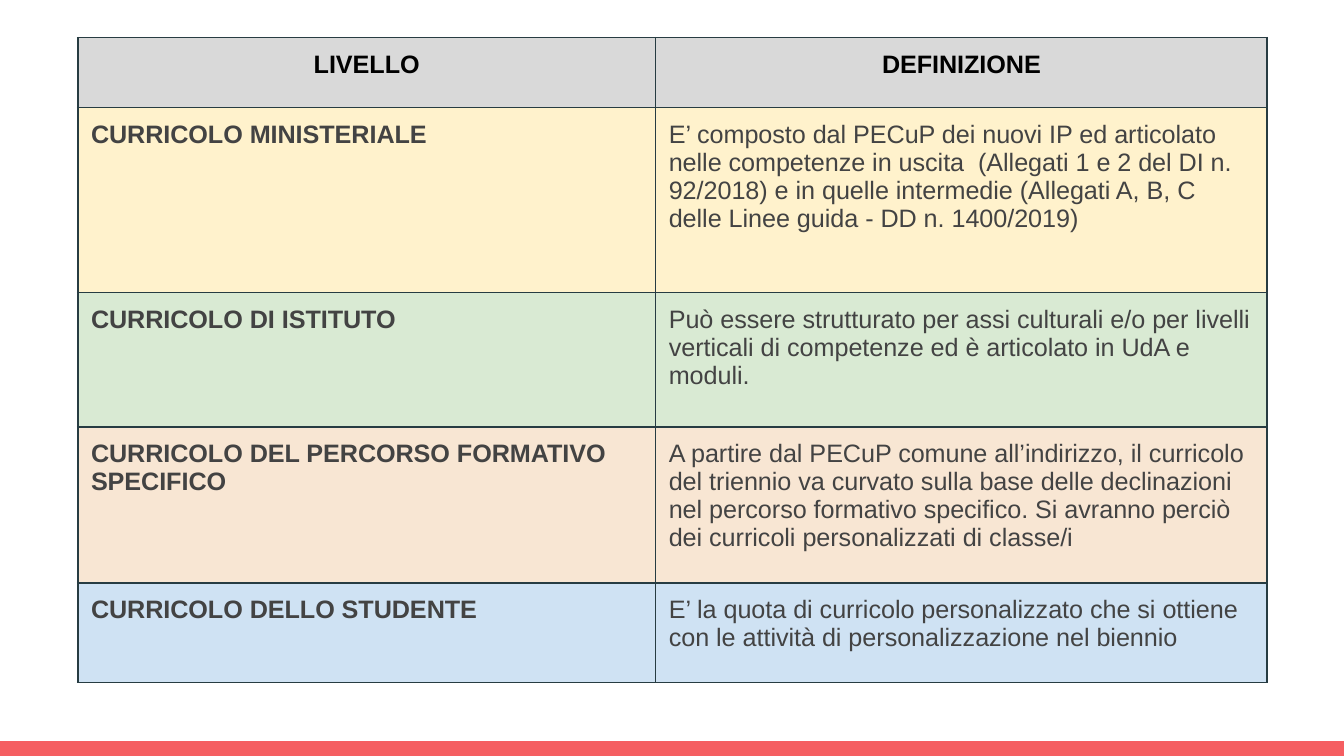
from lxml.etree import SubElement
from pptx import Presentation
from pptx.dml.color import RGBColor
from pptx.enum.shapes import MSO_SHAPE
from pptx.enum.text import PP_ALIGN
from pptx.oxml.ns import qn
from pptx.util import Cm, Pt

HEADER = ("LIVELLO", "DEFINIZIONE", "D9D9D9", 1.32)
LEVELS = [
    ("CURRICOLO MINISTERIALE",
     "E’ composto dal PECuP dei nuovi IP ed articolato nelle competenze in uscita  "
     "(Allegati 1 e 2 del DI n. 92/2018) e in quelle intermedie "
     "(Allegati A, B, C delle Linee guida - DD n. 1400/2019)",
     "FFF2CC", 3.5),
    ("CURRICOLO DI ISTITUTO",
     "Può essere strutturato per assi culturali e/o per livelli verticali "
     "di competenze ed è articolato in UdA e moduli.",
     "D9EAD3", 2.54),
    ("CURRICOLO DEL PERCORSO FORMATIVO SPECIFICO",
     "A partire dal PECuP comune all’indirizzo, il curricolo del triennio va curvato "
     "sulla base delle declinazioni nel percorso formativo specifico. "
     "Si avranno perciò dei curricoli personalizzati di classe/i",
     "F8E6D3", 2.95),
    ("CURRICOLO DELLO STUDENTE",
     "E’ la quota di curricolo personalizzato che si ottiene "
     "con le attività di personalizzazione nel biennio",
     "CFE2F3", 1.88),
]
COL_WIDTHS = (10.92, 11.56)
LEFT, TOP = 1.47, 0.71
SLIDE_W, SLIDE_H, BAND_H = 25.4, 14.29, 0.28


def paint(fill, color):
    fill.solid()
    fill.fore_color.rgb = RGBColor.from_string(color)


def add_borders(cell, color="273C42", width=Pt(1)):
    tc_pr = cell._tc.get_or_add_tcPr()
    for i, side in enumerate(("lnL", "lnR", "lnT", "lnB")):
        ln = SubElement(tc_pr, qn(f"a:{side}"), w=str(width))
        SubElement(SubElement(ln, qn("a:solidFill")), qn("a:srgbClr"), val=color)
        tc_pr.insert(i, ln)


def write_cell(cell, text, fill, color, bold, align):
    cell.margin_left = cell.margin_right = cell.margin_top = cell.margin_bottom = Cm(0.25)
    paint(cell.fill, fill)
    add_borders(cell)
    p = cell.text_frame.paragraphs[0]
    p.text = text
    p.alignment = align
    p.font.name, p.font.size, p.font.bold = "Arial", Pt(13.5), bold
    p.font.color.rgb = RGBColor.from_string(color)


def add_levels_table(s):
    rows = [HEADER, *LEVELS]
    height = sum(row[-1] for row in rows)
    table = s.shapes.add_table(len(rows), len(COL_WIDTHS), Cm(LEFT), Cm(TOP),
                               Cm(sum(COL_WIDTHS)), Cm(height)).table
    for column, width in zip(table.columns, COL_WIDTHS):
        column.width = Cm(width)
    for i, (level, definition, fill, row_height) in enumerate(rows):
        head = i == 0
        table.rows[i].height = Cm(row_height)
        for j, text in enumerate((level, definition)):
            write_cell(table.cell(i, j), text, fill, "000000" if head else "434343",
                       head or j == 0, PP_ALIGN.CENTER if head else PP_ALIGN.LEFT)


def main():
    """Build the slide that defines the four curriculum levels."""
    prs = Presentation()
    prs.slide_width, prs.slide_height = Cm(SLIDE_W), Cm(SLIDE_H)
    s = prs.slides.add_slide(prs.slide_layouts[6])
    band = s.shapes.add_shape(MSO_SHAPE.RECTANGLE, 0, Cm(SLIDE_H - BAND_H),
                              Cm(SLIDE_W), Cm(BAND_H))
    band.shadow.inherit = False
    paint(band.fill, "F55E61")
    band.line.fill.background()
    add_levels_table(s)
    prs.save("out.pptx")


if __name__ == "__main__":
    main()
